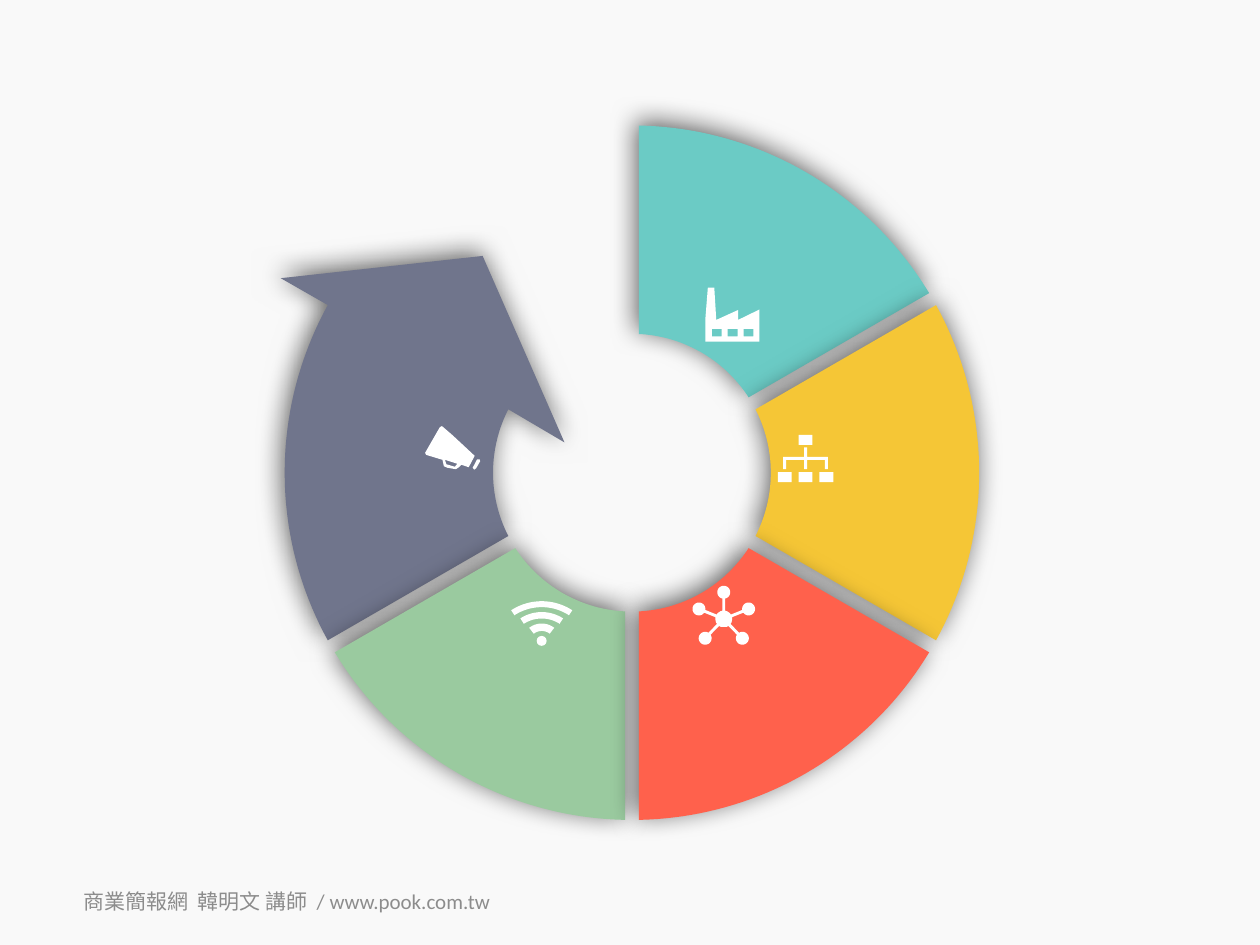
"""Build a circular arrow of five coloured segments, each with a white icon."""
from dataclasses import dataclass
from math import asin, cos, degrees, radians, sin

from lxml import etree
from pptx import Presentation
from pptx import util as u
from pptx.dml.color import RGBColor
from pptx.enum import shapes, text
from pptx.oxml.ns import qn

Point = tuple[float, float]
WHITE = "FFFFFF"
CENTRE = (12.74, 9.53)
OUTER, INNER, HALF_GAP = 7, 2.8, 0.14
SHADOW = {"blurRad": u.Pt(15), "dist": u.Pt(3), "dir": 235 * 60000, "algn": "ctr", "rotWithShape": 0}
FOOTER = "商業簡報網  韓明文 講師  / www.pook.com.tw"
FOOTER_FONT = {"name": "Calibri", "size": u.Pt(12)}
FOOTER_FRAME = {"word_wrap": True, "vertical_anchor": text.MSO_ANCHOR.MIDDLE}


@dataclass
class Segment:
    start: int
    color: str
    head: tuple[Point, ...] = ()


@dataclass
class Wave:
    y: float
    outer: float
    inner: float
    spread: int


SEGMENTS = [
    Segment(0, "6BCBC5"),
    Segment(240, "70758C", ((5.66, 5.61), (9.73, 5.16), (11.38, 8.92))),
    Segment(60, "F5C636"),
    Segment(180, "9ACA9F"),
    Segment(120, "FF614C"),
]
WAVES = [Wave(12.98, 0.41, 0.26, 38), Wave(13.13, 0.79, 0.66, 33), Wave(13.25, 1.13, 1.01, 33)]


def rgb(color: str) -> RGBColor:
    return RGBColor.from_string(color)


def polar(centre: Point, radius: float, angle: float) -> Point:
    a = radians(angle)
    return centre[0] + radius * sin(a), centre[1] - radius * cos(a)


def arc(centre: Point, radius: float, start: float, end: float, steps: int = 40) -> list[Point]:
    return [polar(centre, radius, start + (end - start) * i / steps) for i in range(steps + 1)]


def band(centre: Point, outer: float, inner: float, start: float, end: float,
         half_gap: float = 0, head: tuple[Point, ...] = ()) -> list[Point]:
    trim_out, trim_in = (degrees(asin(half_gap / r)) for r in (outer, inner))
    return [*arc(centre, outer, start + trim_out, end - trim_out), *head,
            *arc(centre, inner, end - trim_in, start + trim_in)]


def box(x: float, y: float, w: float, h: float) -> list[Point]:
    return [(x, y), (x + w, y), (x + w, y + h), (x, y + h)]


def paint(sp, color: str) -> None:
    sp.shadow.inherit = False
    sp.fill.solid()
    sp.fill.fore_color.rgb = rgb(color)
    sp.line.fill.background()


def outline(parent, color: str, *contours: list[Point]):
    paths = [[(u.Cm(x), u.Cm(y)) for x, y in contour] for contour in contours]
    builder = parent.build_freeform(*paths[0][0], scale=1.0)
    builder.add_line_segments(paths[0][1:])
    for path in paths[1:]:
        builder.move_to(*path[0])
        builder.add_line_segments(path[1:])
    sp = builder.convert_to_shape()
    paint(sp, color)
    return sp


def preset(parent, kind, x: float, y: float, w: float, h: float) -> None:
    paint(parent.add_shape(kind, u.Cm(x), u.Cm(y), u.Cm(w), u.Cm(h)), WHITE)


def add_footer(parent) -> None:
    tf = parent.add_textbox(u.Cm(1.27), u.Cm(17.65), u.Cm(9.02), u.Cm(1.02)).text_frame
    for name, value in FOOTER_FRAME.items():
        setattr(tf, name, value)
    p = tf.paragraphs[0]
    p.alignment = text.PP_ALIGN.CENTER
    r = p.add_run()
    r.text = FOOTER
    for name, value in FOOTER_FONT.items():
        setattr(r.font, name, value)
    r.font.color.rgb = rgb("8C8C8C")


def add_segment(parent, seg: Segment) -> None:
    sp = outline(parent, seg.color,
                 band(CENTRE, OUTER, INNER, seg.start, seg.start + 60, HALF_GAP, seg.head))
    effects = sp._element.spPr.find(qn("a:effectLst"))
    shadow = etree.SubElement(effects, qn("a:outerShdw"))
    for name, value in SHADOW.items():
        shadow.set(name, str(value))
    black = etree.SubElement(shadow, qn("a:srgbClr"), val="000000")
    etree.SubElement(black, qn("a:alpha"), val="60000")


def add_factory(parent) -> None:
    walls = [(14.27, 5.8), (14.4, 5.8), (14.44, 6.45), (14.88, 6.25), (14.88, 6.45),
             (15.31, 6.24), (15.31, 6.89), (14.22, 6.89), (14.22, 6.43)]
    windows = [box(14.35 + 0.32 * i, 6.63, 0.2, 0.15) for i in range(3)]
    outline(parent, WHITE, walls, *windows)


def add_megaphone(parent) -> None:
    mouthpiece = [(9.56, 9.47), (9.53, 9.43), (9.62, 9.26), (9.67, 9.26), (9.68, 9.3), (9.6, 9.44)]
    horn = [(8.91, 8.59), (8.87, 8.61), (8.57, 9.13), (8.59, 9.17), (8.92, 9.27), (8.95, 9.4),
            (9.02, 9.43), (9.19, 9.46), (9.25, 9.42), (9.3, 9.37), (9.45, 9.42), (9.57, 9.19),
            (9.42, 9.05), (9.12, 8.77)]
    handle = [(8.97, 9.27), (9.22, 9.35), (9.17, 9.41), (9, 9.36)]
    group = parent.add_group_shape().shapes
    outline(group, WHITE, mouthpiece)
    outline(group, WHITE, horn, handle)


def add_hierarchy(parent) -> None:
    group = parent.add_group_shape().shapes
    for x, y in ((16.1, 8.77), (15.68, 9.52), (16.1, 9.52), (16.52, 9.52)):
        preset(group, shapes.MSO_SHAPE.RECTANGLE, x, y, 0.28, 0.2)
    outline(group, WHITE, [
        (16.21, 9.02), (16.27, 9.02), (16.27, 9.21), (16.69, 9.21), (16.69, 9.46), (16.63, 9.46),
        (16.63, 9.27), (16.27, 9.27), (16.27, 9.46), (16.21, 9.46), (16.21, 9.27), (15.85, 9.27),
        (15.85, 9.46), (15.79, 9.46), (15.79, 9.21), (16.21, 9.21)])


def add_wifi(parent) -> None:
    group = parent.add_group_shape().shapes
    for wave in WAVES:
        outline(group, WHITE,
                band((10.92, wave.y), wave.outer, wave.inner, -wave.spread, wave.spread))
    preset(group, shapes.MSO_SHAPE.OVAL, 10.82, 12.82, 0.2, 0.2)


def add_network(parent) -> None:
    hub, points = (14.59, 12.48), []
    for angle in (0, 68, 136, 224, 292):
        node = polar(hub, 0.54, angle)
        points += [polar(hub, 0.17, angle - 24), polar(hub, 0.17, angle - 10),
                   *arc(node, 0.13, angle - 167, angle + 167),
                   polar(hub, 0.17, angle + 10), polar(hub, 0.17, angle + 24)]
    outline(parent, WHITE, points)


def main() -> None:
    prs = Presentation()
    prs.slide_width, prs.slide_height = u.Cm(25.4), u.Cm(19.05)
    s = prs.slides.add_slide(prs.slide_layouts[6])
    s.background.fill.solid()
    s.background.fill.fore_color.rgb = rgb("F9F9F9")
    add_footer(s.shapes)
    for seg in SEGMENTS:
        add_segment(s.shapes, seg)
    for add_icon in (add_factory, add_megaphone, add_hierarchy, add_wifi, add_network):
        add_icon(s.shapes)
    prs.save("out.pptx")


if __name__ == "__main__":
    main()
